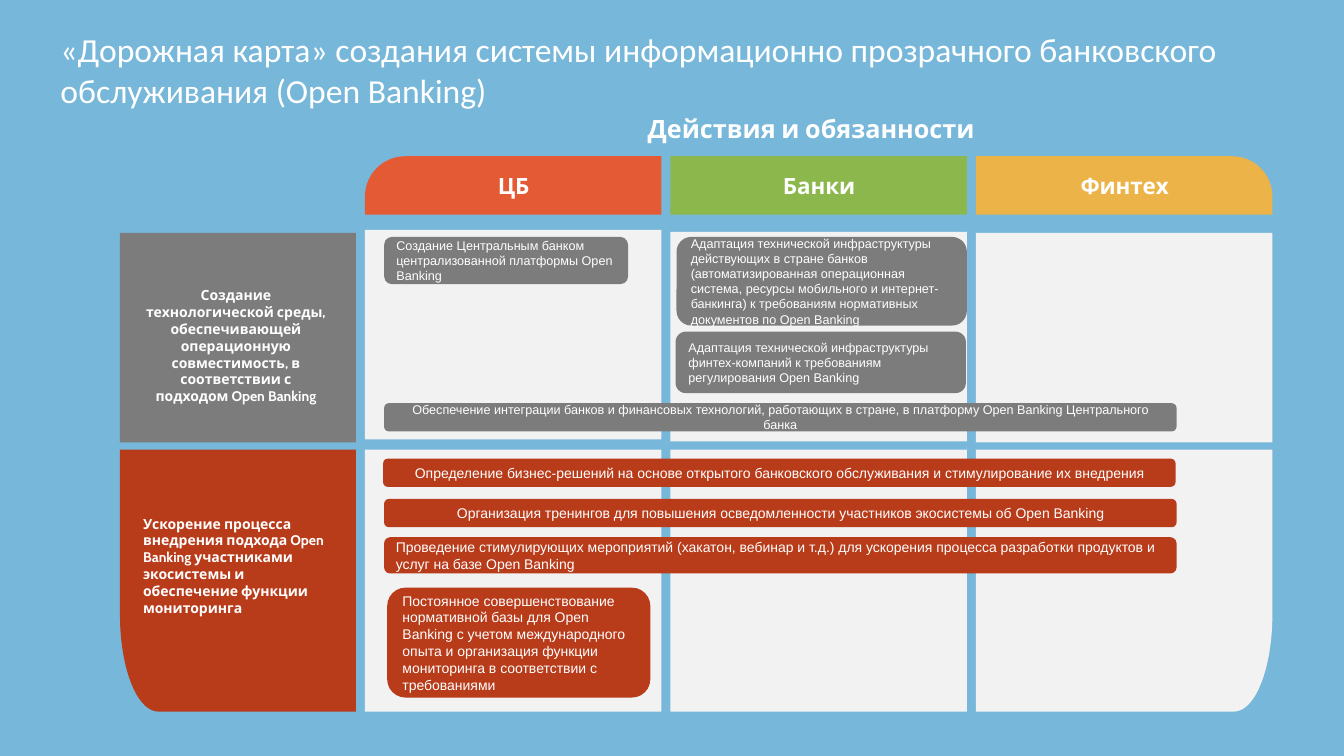
from dataclasses import dataclass
from math import cos, radians, sin

from pptx import Presentation
from pptx.dml.color import RGBColor
from pptx.enum.shapes import MSO_SHAPE
from pptx.enum.text import MSO_ANCHOR, MSO_AUTO_SIZE, PP_ALIGN
from pptx.util import Inches, Pt


@dataclass(frozen=True)
class Theme:
    sky: str = "77B7D9"
    white: str = "FFFFFF"
    cell: str = "F2F2F2"
    gray: str = "7C7C7C"
    brick: str = "B83B1A"
    orange: str = "E35A35"
    green: str = "8BB74C"
    amber: str = "ECB448"
    title_font: str = "Calibri"
    heading_font: str = "Cabin"
    body_font: str = "Arial"
    title_size: float = 24
    section_size: float = 18
    column_size: float = 16
    text_size: float = 10
    small_size: float = 9


THEME = Theme()
TITLE = ("«Дорожная карта» создания системы информационно прозрачного "
         "банковского обслуживания (Open Banking)")
COLUMN_LEFT, COLUMN_STEP, COLUMN_WIDTH = 3.62, 3.03, 2.94
HEADER_TOP, HEADER_HEIGHT = 1.55, 0.58
LABEL_LEFT, LABEL_WIDTH = 1.19, 2.34
FIRST_ROW_TOPS, FIRST_ROW_HEIGHT = (2.28, 2.3, 2.31), 2.08
SECOND_ROW_TOP, SECOND_ROW_HEIGHT = 4.46, 2.6
TOP_LEFT, TOP_RIGHT, BOTTOM_RIGHT, BOTTOM_LEFT = range(4)
HEADER_RADII = (0.4, 0.4)
BASE_RADII = (0.38, 0.96)
CENTER, LEFT = PP_ALIGN.CENTER, PP_ALIGN.LEFT

# name, colour, rounded header corner, rounded base corner
COLUMNS = [
    ("ЦБ", THEME.orange, TOP_LEFT, None),
    ("Банки", THEME.green, None, None),
    ("Финтех", THEME.amber, TOP_RIGHT, BOTTOM_RIGHT),
]
# text, fill, top of panel, panel height, rounded corner, top of text, alignment
ROWS = [
    ("Создание технологической среды, обеспечивающей операционную совместимость, "
     "в соответствии с подходом Open Banking",
     THEME.gray, 2.31, FIRST_ROW_HEIGHT, None, 3.11, CENTER),
    ("Ускорение процесса внедрения подхода Open Banking участниками экосистемы "
     "и обеспечение функции мониторинга",
     THEME.brick, SECOND_ROW_TOP, SECOND_ROW_HEIGHT, BOTTOM_LEFT, 5.29, LEFT),
]
# text, box, alignment
TECHNOLOGY_TASKS = [
    ("Создание Центральным банком централизованной платформы Open Banking",
     (3.81, 2.35, 2.42, 0.47), LEFT),
    ("Адаптация технической инфраструктуры действующих в стране банков "
     "(автоматизированная операционная система, ресурсы мобильного и "
     "интернет-банкинга) к требованиям нормативных документов по Open Banking",
     (6.71, 2.35, 2.88, 0.88), LEFT),
    ("Адаптация технической инфраструктуры финтех-компаний к требованиям "
     "регулирования Open Banking", (6.7, 3.29, 2.88, 0.61), LEFT),
    ("Обеспечение интеграции банков и финансовых технологий, работающих в стране, "
     "в платформу Open Banking Центрального банка", (3.81, 4, 7.86, 0.28), CENTER),
]
ADOPTION_TASKS = [
    ("Постоянное совершенствование нормативной базы для Open Banking с учетом "
     "международного опыта и организация функции мониторинга в соответствии "
     "с требованиями", (3.84, 5.83, 2.61, 1.09), LEFT),
    ("Определение бизнес-решений на основе открытого банковского обслуживания "
     "и стимулирование их внедрения", (3.8, 4.55, 7.86, 0.28), CENTER),
    ("Организация тренингов для повышения осведомленности участников экосистемы "
     "об Open Banking", (3.81, 4.95, 7.86, 0.28), CENTER),
    ("Проведение стимулирующих мероприятий (хакатон, вебинар и т.д.) для ускорения "
     "процесса разработки продуктов и услуг на базе Open Banking",
     (3.81, 5.33, 7.86, 0.36), LEFT),
]


def corner_points(box, rounded, radii):
    """Return the outline of a box with one elliptical corner, clockwise."""
    left, top, width, height = box
    points = []
    for corner, (right, bottom) in enumerate([(0, 0), (1, 0), (1, 1), (0, 1)]):
        x, y = left + right * width, top + bottom * height
        if corner != rounded:
            points.append((x, y))
            continue
        radius_x, radius_y = radii
        center_x = x + radius_x * (1 - 2 * right)
        center_y = y + radius_y * (1 - 2 * bottom)
        for degrees in range(180 + 90 * corner, 271 + 90 * corner, 5):
            angle = radians(degrees)
            points.append((center_x + radius_x * cos(angle),
                           center_y + radius_y * sin(angle)))
    return points


class RoadmapSlide:
    def __init__(self, deck, theme):
        self.theme = theme
        self.page = deck.slides.add_slide(deck.slide_layouts[5])
        self.shapes = self.page.shapes
        fill = self.page.background.fill
        fill.solid()
        fill.fore_color.rgb = RGBColor.from_string(theme.sky)

    def paint(self, shape, color):
        shape.shadow.inherit = False
        shape.fill.solid()
        shape.fill.fore_color.rgb = RGBColor.from_string(color)
        shape.line.fill.background()

    def set_text(self, shape, text, font, size, align=LEFT, bold=False, margins=None):
        frame = shape.text_frame
        frame_format = {"word_wrap": True, "auto_size": MSO_AUTO_SIZE.NONE,
                        "vertical_anchor": MSO_ANCHOR.MIDDLE}
        if margins is not None:
            sides = ("margin_left", "margin_top", "margin_right", "margin_bottom")
            frame_format.update(zip(sides, map(Inches, margins)))
        for name, value in frame_format.items():
            setattr(frame, name, value)
        para = frame.paragraphs[0]
        para.alignment = align
        span = para.add_run()
        span.text = text
        for name, value in {"name": font, "size": Pt(size), "bold": bold}.items():
            setattr(span.font, name, value)
        span.font.color.rgb = RGBColor.from_string(self.theme.white)

    def title(self, text, box):
        holder = self.shapes.title
        for name, value in zip(("left", "top", "width", "height"), box):
            setattr(holder, name, Inches(value))
        self.set_text(holder, text, self.theme.title_font, self.theme.title_size,
                      margins=(0, 0.07, 0, 0.07))

    def panel(self, box, color, rounded=None, radii=BASE_RADII):
        if rounded is None:
            shape = self.shapes.add_shape(MSO_SHAPE.RECTANGLE, *map(Inches, box))
        else:
            start, *others = [(Inches(x), Inches(y))
                              for x, y in corner_points(box, rounded, radii)]
            builder = self.shapes.build_freeform(*start)
            builder.add_line_segments(others, close=True)
            shape = builder.convert_to_shape()
        self.paint(shape, color)

    def heading(self, text, box, size, align=CENTER):
        label = self.shapes.add_textbox(*map(Inches, box))
        self.set_text(label, text, self.theme.heading_font, size, align, True,
                      (0, 0, 0, 0))

    def task(self, text, box, color, size, align):
        shape = self.shapes.add_shape(MSO_SHAPE.ROUNDED_RECTANGLE, *map(Inches, box))
        self.paint(shape, color)
        self.set_text(shape, text, self.theme.body_font, size, align)


def main():
    deck = Presentation()
    deck.slide_width, deck.slide_height = Inches(13.33), Inches(7.5)
    roadmap = RoadmapSlide(deck, THEME)
    roadmap.title(TITLE, (0.6, 0.3, 12.06, 0.78))
    roadmap.heading("Действия и обязанности", (3.44, 1.07, 9.21, 0.4),
                    THEME.section_size)

    for index, (name, color, header_corner, base_corner) in enumerate(COLUMNS):
        left = COLUMN_LEFT + index * COLUMN_STEP
        roadmap.panel((left, HEADER_TOP, COLUMN_WIDTH, HEADER_HEIGHT), color,
                      header_corner, HEADER_RADII)
        roadmap.heading(name, (left + 0.46, 1.72, 2.03, 0.24), THEME.column_size)
        roadmap.panel((left, FIRST_ROW_TOPS[index], COLUMN_WIDTH, FIRST_ROW_HEIGHT),
                      THEME.cell)
        roadmap.panel((left, SECOND_ROW_TOP, COLUMN_WIDTH, SECOND_ROW_HEIGHT),
                      THEME.cell, base_corner)

    for text, color, top, height, corner, text_top, align in ROWS:
        roadmap.panel((LABEL_LEFT, top, LABEL_WIDTH, height), color, corner)
        roadmap.heading(text, (1.42, text_top, 1.84, 0.64), THEME.text_size, align)

    for tasks, color, size in [(TECHNOLOGY_TASKS, THEME.gray, THEME.small_size),
                               (ADOPTION_TASKS, THEME.brick, THEME.text_size)]:
        for text, box, align in tasks:
            roadmap.task(text, box, color, size, align)

    deck.save("out.pptx")


if __name__ == "__main__":
    main()
